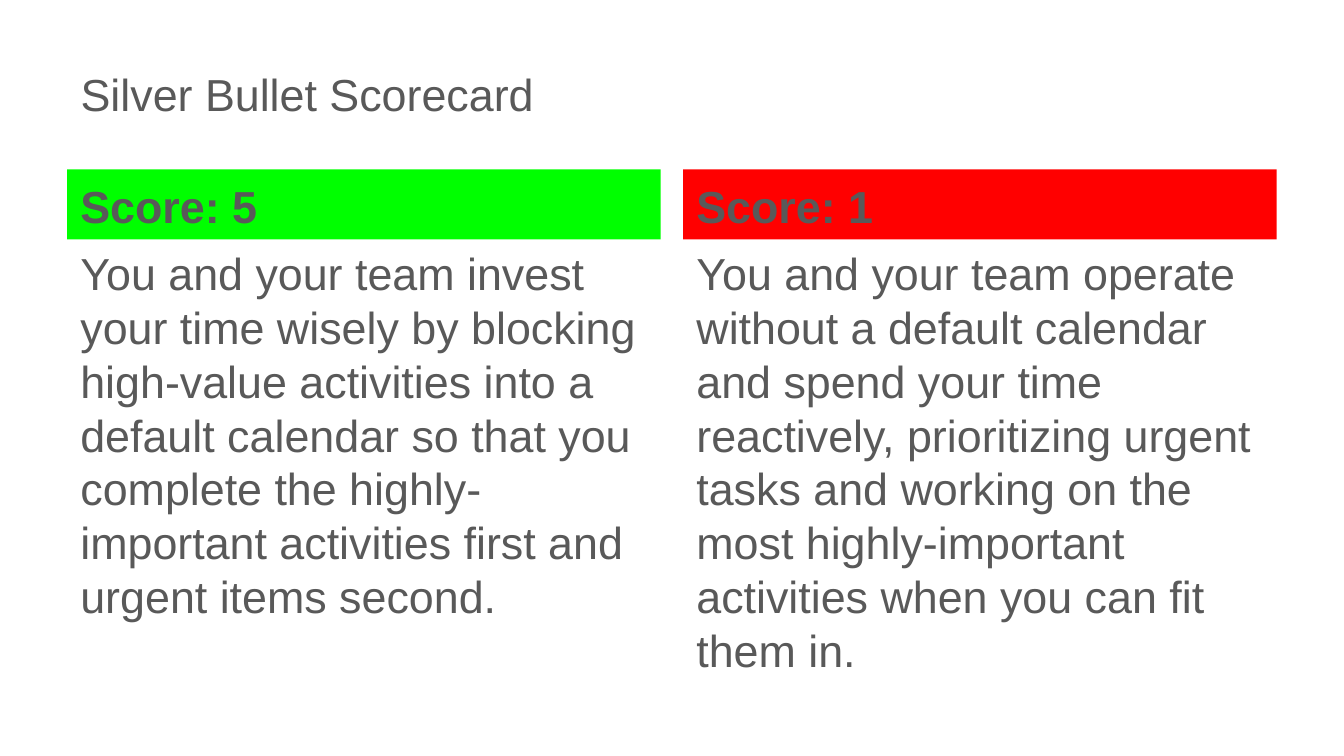
from pptx import Presentation
from pptx import util as u
from pptx.dml.color import RGBColor
from pptx.enum import shapes, text

PX = 9525
COLORS = {"ink": "595959", "high": "00FF00", "low": "FF0000", "page": "FFFFFF"}
MIDDLE = text.MSO_ANCHOR.MIDDLE
BOTTOM = text.MSO_ANCHOR.BOTTOM
TOP = text.MSO_ANCHOR.TOP


def rgb(name):
    return RGBColor.from_string(COLORS[name])


def write(shape, words, *, size=24, bold=False, color="ink", font="Arial",
          leading=28.8, anchor=TOP):
    frame = shape.text_frame
    frame.word_wrap = True
    frame.auto_size = text.MSO_AUTO_SIZE.NONE
    frame.vertical_anchor = anchor
    frame.text = words
    paragraph = frame.paragraphs[0]
    paragraph.alignment = text.PP_ALIGN.LEFT
    paragraph.line_spacing = u.Pt(leading)
    for run in paragraph.runs:
        run.font.name = font
        run.font.size = u.Pt(size)
        run.font.bold = bold
        run.font.color.rgb = rgb(color)


class ScorecardSlide:
    def __init__(self, deck):
        self.slide = deck.slides.add_slide(deck.slide_layouts[5])
        background = self.slide.background.fill
        background.solid()
        background.fore_color.rgb = rgb("page")

    def title(self, words, *box):
        heading = self.slide.shapes.title
        heading.left, heading.top, heading.width, heading.height = (
            n * PX * 1 for n in box)
        write(heading, words, anchor=MIDDLE)

    def band(self, words, color, *box):
        bar = self.slide.shapes.add_shape(
            shapes.MSO_SHAPE.RECTANGLE, *(n * PX for n in box))
        bar.shadow.inherit = False
        bar.fill.solid()
        bar.fill.fore_color.rgb = rgb(color)
        bar.line.fill.background()
        write(bar, words, bold=True, anchor=BOTTOM)

    def body(self, words, *box):
        description = self.slide.shapes.add_textbox(*(n * PX for n in box))
        write(description, words)


def main():
    deck = Presentation()
    deck.slide_width, deck.slide_height = 960 * PX, 540 * PX
    scorecard = ScorecardSlide(deck)

    margin, column, gap = 48, 424, 16
    band_top, band_height, body_height = 121, 50, 289
    scorecard.title("Silver Bullet Scorecard", margin, 22, 864, 90)

    scores = [
        ("Score: 5", "high",
         "You and your team invest your time wisely by blocking high-value "
         "activities into a default calendar so that you complete the "
         "highly-important activities first and urgent items second."),
        ("Score: 1", "low",
         "You and your team operate without a default calendar and spend "
         "your time reactively, prioritizing urgent tasks and working on the "
         "most highly-important activities when you can fit them in."),
    ]
    for index, (score, color, description) in enumerate(scores):
        left = margin + index * (column + gap)
        scorecard.band(score, color, left, band_top, column, band_height)
        scorecard.body(description, left, band_top + band_height,
                       column, body_height)

    deck.save("out.pptx")


if __name__ == "__main__":
    main()
